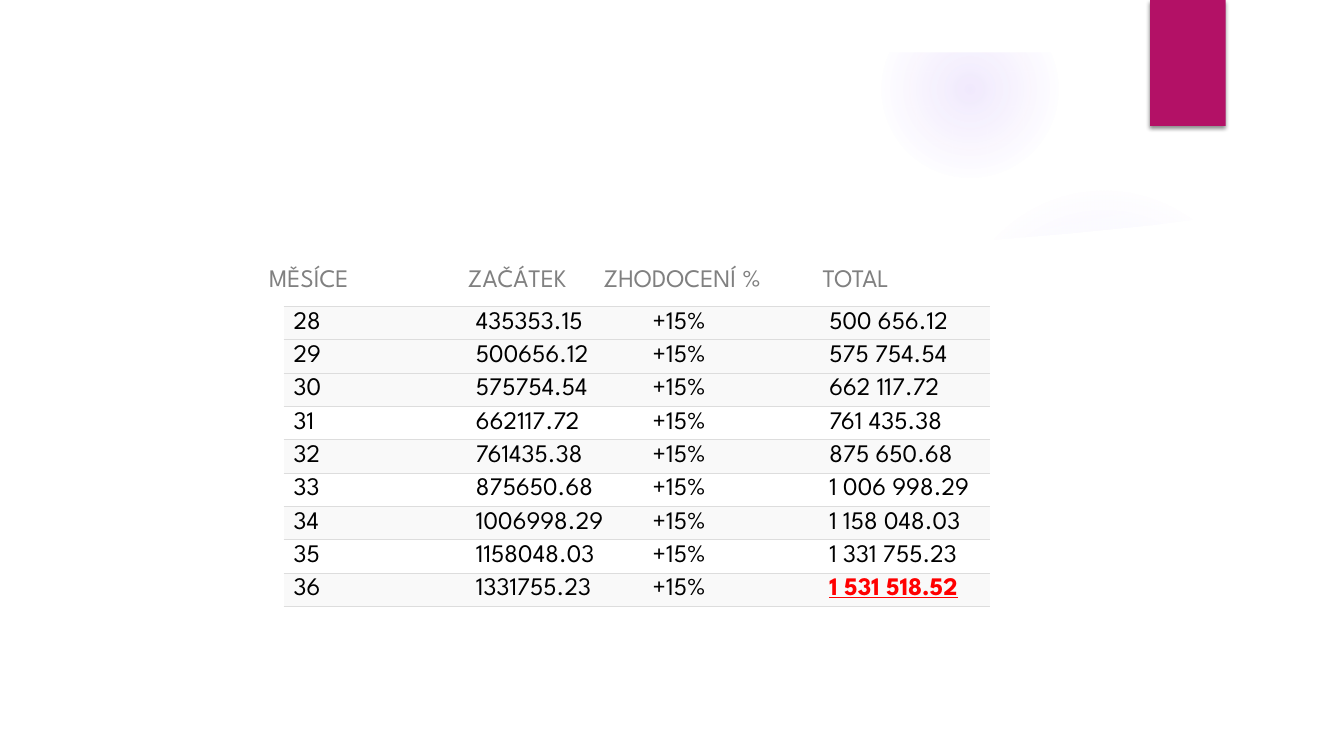
from lxml import etree
from pptx import Presentation
from pptx.dml.color import RGBColor as Rgb
from pptx.enum.shapes import MSO_SHAPE as Preset
from pptx.enum.text import MSO_ANCHOR as Anchor, MSO_AUTO_SIZE as AutoSize, PP_ALIGN as Align
from pptx.oxml.ns import qn
from pptx.util import Pt

COLORS = {"white": "FFFFFF", "violet": "9B6BF2", "magenta": "B31166", "black": "000000",
          "grey": "808080", "row": "F9F9F9", "rule": "DDDDDD", "red": "FF0000"}
FONT = "League Spartan"
SLIDE_W, SLIDE_H = 960, 540
ROW_H, TABLE_H, COLUMN_W = 23.8, 288, 126.2
HEADINGS = ["MĚSÍCE", "ZAČÁTEK", "ZHODOCENÍ %", "TOTAL"]
HEADING_STOPS = [142, 239, 395.5]
FIRST_MONTH, FIRST_START = 28, "435353.15"
TOTALS = ["500 656.12", "575 754.54", "662 117.72", "761 435.38", "875 650.68",
          "1 006 998.29", "1 158 048.03", "1 331 755.23", "1 531 518.52"]
WHITE_MONTHS = {31, 33, 35}

BAND = [(672.5, 180), (749, 175), (840, 165), (928, 154), (923.8, 119.5), (889.9, 130.7),
        (840.2, 144), (782, 157), (727.2, 167), (669.6, 175)]
PANEL = [(36, 147), (36, 504), (924, 504), (924, 147), (883.4, 153), (823, 161),
         (763, 167), (703, 172), (643.5, 175.5), (566, 178), (510, 178.5),
         (437, 178), (351, 176), (259, 170), (179, 163.5), (97, 155)]
PAGE = [(0, 0), (0, SLIDE_H), (SLIDE_W, SLIDE_H), (SLIDE_W, 0)]
WINDOW = [(922.3, 502.6), (37.4, 502.6), (37.4, 37.4), (922.3, 37.4)]


def child(parent, tag, **attributes):
    return etree.SubElement(parent, qn(tag), {key: str(value) for key, value in attributes.items()})


def color_xml(parent, color, alpha=100):
    node = child(parent, "a:srgbClr", val=COLORS[color])
    if alpha < 100:
        child(node, "a:alpha", val=alpha * 1000)


class SlideBuilder:
    def __init__(self, slide):
        self.slide = slide
        self.shapes = slide.shapes

    def style(self, font, color="black", **extra):
        for name, value in {"name": FONT, "size": Pt(18), "bold": False, **extra}.items():
            setattr(font, name, value)
        font.color.rgb = Rgb.from_string(COLORS[color])

    def plain(self, shape, color):
        shape.shadow.inherit = False
        shape.line.fill.background()
        shape.fill.solid()
        shape.fill.fore_color.rgb = Rgb.from_string(COLORS[color])
        return shape

    def preset(self, kind, left, top, width, height, color):
        return self.plain(self.shapes.add_shape(kind, Pt(left), Pt(top), Pt(width), Pt(height)), color)

    def glow(self, left, top, size, stops):
        """Circle whose tint fades outwards; stops are (position, opacity) in percent."""
        disc = self.preset(Preset.OVAL, left, top, size, size, "violet")
        solid = disc._element.spPr.find(qn("a:solidFill"))
        gradient = etree.Element(qn("a:gradFill"), rotWithShape="1")
        stop_list = child(gradient, "a:gsLst")
        for position, opacity in stops:
            color_xml(child(stop_list, "a:gs", pos=position * 1000), "violet", opacity)
        center = child(gradient, "a:path", path="circle")
        child(center, "a:fillToRect", l=50000, t=50000, r=50000, b=50000)
        solid.getparent().replace(solid, gradient)

    def outline(self, *contours, alpha=100):
        """White area bounded by the contours; a second contour is a hole."""
        (x, y), *_ = contours[0]
        builder = self.shapes.build_freeform(Pt(x), Pt(y))
        for index, contour in enumerate(contours):
            points = [(Pt(px), Pt(py)) for px, py in contour]
            if index:
                builder.move_to(*points[0])
            builder.add_line_segments(points[1:], close=True)
        area = self.plain(builder.convert_to_shape(), "white")
        if alpha < 100:
            tint = area._element.spPr.find(qn("a:solidFill"))[0]
            child(tint, "a:alpha", val=alpha * 1000)

    def tab(self, left, top, width, height):
        marker = self.preset(Preset.RECTANGLE, left, top, width, height, "magenta")
        effects = marker._element.spPr.find(qn("a:effectLst"))
        shadow = child(effects, "a:outerShdw", blurRad=Pt(3), dist=Pt(2), dir=5400000, rotWithShape=0)
        color_xml(shadow, "black", 45)

    def title(self, left, top, width, height):
        heading = self.shapes.title
        self.shapes._spTree.append(heading._element)
        for name, value in {"left": left, "top": top, "width": width, "height": height}.items():
            setattr(heading, name, Pt(value))
        frame = heading.text_frame
        for name, value in {"auto_size": AutoSize.NONE, "word_wrap": True, "margin_left": Pt(15.8),
                            "vertical_anchor": Anchor.MIDDLE}.items():
            setattr(frame, name, value)
        line = frame.paragraphs[0]
        line.alignment = Align.LEFT
        stops = child(line._p.get_or_add_pPr(), "a:tabLst")
        for stop in HEADING_STOPS:
            child(stops, "a:tab", pos=Pt(stop), algn="l")
        run = line.add_run()
        run.text = "\t".join(HEADINGS)
        self.style(run.font, "grey")

    def cell(self, cell, text, background, indent, rules, **emphasis):
        cell.margin_left = Pt(indent)
        cell.fill.solid()
        cell.fill.fore_color.rgb = Rgb.from_string(COLORS[background])
        for index, side in enumerate(("a:lnL", "a:lnR", "a:lnT", "a:lnB")):
            border = etree.Element(qn(side), w=str(Pt(0.75)))
            if side in rules:
                color_xml(child(border, "a:solidFill"), "rule")
            else:
                child(border, "a:noFill")
            cell._tc.get_or_add_tcPr().insert(index, border)
        if text:
            run = cell.text_frame.paragraphs[0].add_run()
            run.text = text
            self.style(run.font, **emphasis)

    def table(self, left, top, rows):
        table = self.shapes.add_table(len(rows), len(HEADINGS), Pt(left), Pt(top),
                                      Pt(COLUMN_W * len(HEADINGS)), Pt(TABLE_H)).table
        table.first_row = table.horz_banding = False
        last = len(rows) - 1
        for r, values in enumerate(rows):
            table.rows[r].height = Pt(TABLE_H - ROW_H * last if r == last else ROW_H)
            white = r == last or FIRST_MONTH + r in WHITE_MONTHS
            rules = ("a:lnT",) if r == last else ("a:lnT", "a:lnB")
            for c, value in enumerate(values):
                final = value == TOTALS[-1]
                emphasis = {"color": "red", "bold": True, "underline": True} if final else {}
                self.cell(table.cell(r, c), value, "white" if white else "row",
                          11.3 if c else 7.2, rules, **emphasis)


def main():
    deck = Presentation()
    deck.slide_width, deck.slide_height = Pt(SLIDE_W), Pt(SLIDE_H)
    page = SlideBuilder(deck.slides.add_slide(deck.slide_layouts[5]))
    page.glow(677.5, 131.8, 221.8, [(0, 7), (36, 6), (69, 0)])
    page.glow(630, 0.7, 126, [(0, 14), (36, 7), (73, 0)])
    page.outline(BAND, alpha=20)
    page.outline(PANEL)
    page.outline(PAGE, WINDOW)
    page.tab(821.5, 0, 54, 90)
    page.title(176.4, 177.8, 592.6, 41)
    starts = [FIRST_START] + [total.replace(" ", "") for total in TOTALS]
    rows = [(str(month), start, "+15%", total)
            for month, (start, total) in enumerate(zip(starts, TOTALS), FIRST_MONTH)]
    page.table(202.5, 218.9, rows + [("",) * len(HEADINGS)])
    deck.save("out.pptx")


if __name__ == "__main__":
    main()
